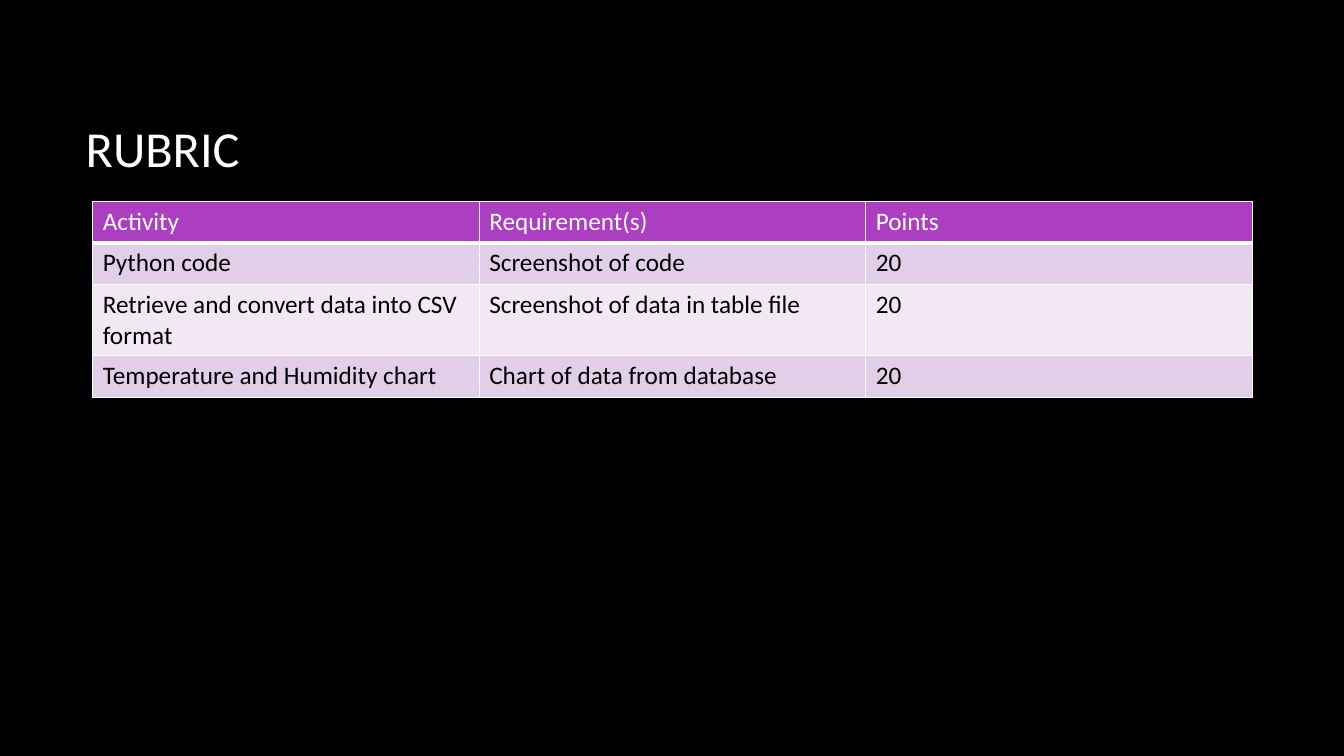
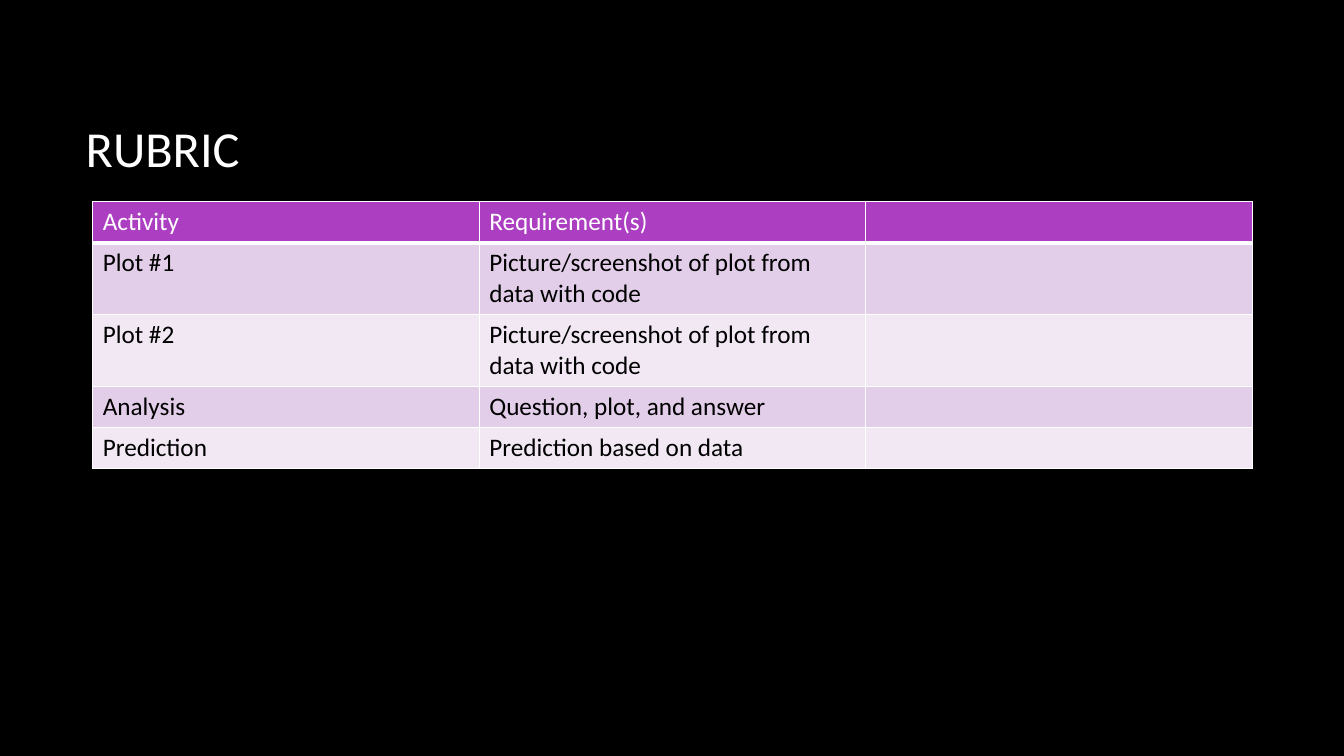
from dataclasses import dataclass

from lxml import etree
from pptx import Presentation
from pptx.dml.color import RGBColor
from pptx.enum.text import MSO_ANCHOR, PP_ALIGN
from pptx.oxml.ns import qn
from pptx.util import Inches, Pt

LEFT = PP_ALIGN.LEFT
MIDDLE = MSO_ANCHOR.MIDDLE
TITLE_ONLY = 5


@dataclass(frozen=True)
class Theme:
    font: str = "Calibri"
    title_size: int = 36
    table_size: int = 18
    background: str = "000000"
    light: str = "FFFFFF"
    dark: str = "000000"
    header: str = "AC3EC1"
    bands: tuple[str, str] = ("E3CEE9", "F1E8F4")
    border: float = 1
    header_rule: float = 3


@dataclass(frozen=True)
class Rubric:
    title: str
    rows: tuple[tuple[str, str, str], ...]


THEME = Theme()
TITLE_AREA = {"left": Inches(0.75), "top": Inches(0.67),
              "width": Inches(11.08), "height": Inches(1.59)}
TABLE_LEFT, TABLE_TOP, TABLE_WIDTH = Inches(0.92), Inches(2), Inches(11.5)
ROW_HEIGHT = Inches(0.41)

RUBRICS = (
    Rubric("RUBRIC", (
        ("Activity", "Requirement(s)", "Points"),
        ("Python code", "Screenshot of code", "20"),
        ("Retrieve and convert data into CSV format",
         "Screenshot of data in table file", "20"),
        ("Temperature and Humidity chart", "Chart of data from database", "20"),
    )),
    Rubric("RUBRIC", (
        ("Activity", "Requirement(s)", ""),
        ("Plot #1", "Picture/screenshot of plot from data with code", ""),
        ("Plot #2", "Picture/screenshot of plot from data with code", ""),
        ("Analysis", "Question, plot, and answer", ""),
        ("Prediction", "Prediction based on data", ""),
    )),
)


def write_text(frame, text: str, size: int, color: str) -> None:
    para = frame.paragraphs[0]
    para.alignment = LEFT
    para.font.size = Pt(size)
    if not text:
        return
    span = para.add_run()
    span.text = text
    for name, value in {"name": THEME.font, "size": Pt(size), "bold": False}.items():
        setattr(span.font, name, value)
    span.font.color.rgb = RGBColor.from_string(color)


def add_borders(cell, bottom: float) -> None:
    """Outline a cell; must run before its fill is set, as the XML order requires."""
    properties = cell._tc.get_or_add_tcPr()
    widths = {"lnL": THEME.border, "lnR": THEME.border,
              "lnT": THEME.border, "lnB": bottom}
    for side, width in widths.items():
        line = etree.SubElement(properties, qn(f"a:{side}"), w=str(Pt(width)))
        fill = etree.SubElement(line, qn("a:solidFill"))
        etree.SubElement(fill, qn("a:srgbClr"), val=THEME.light)


def add_title(page, text: str) -> None:
    box = page.shapes.title
    for name, value in TITLE_AREA.items():
        setattr(box, name, value)
    box.text_frame.vertical_anchor = MIDDLE
    write_text(box.text_frame, text, THEME.title_size, THEME.light)


def add_rubric_table(page, rows: tuple[tuple[str, str, str], ...]) -> None:
    table = page.shapes.add_table(
        len(rows), len(rows[0]), TABLE_LEFT, TABLE_TOP,
        TABLE_WIDTH, ROW_HEIGHT * len(rows)).table
    for row_index, texts in enumerate(rows):
        is_header = row_index == 0
        fill = THEME.header if is_header else THEME.bands[(row_index - 1) % 2]
        color = THEME.light if is_header else THEME.dark
        bottom = THEME.header_rule if is_header else THEME.border
        for column_index, text in enumerate(texts):
            cell = table.cell(row_index, column_index)
            add_borders(cell, bottom)
            cell.fill.solid()
            cell.fill.fore_color.rgb = RGBColor.from_string(fill)
            write_text(cell.text_frame, text, THEME.table_size, color)


def main() -> None:
    deck = Presentation()
    deck.slide_width, deck.slide_height = Inches(13.33), Inches(7.5)
    background = deck.slide_master.background.fill
    background.solid()
    background.fore_color.rgb = RGBColor.from_string(THEME.background)
    for rubric in RUBRICS:
        page = deck.slides.add_slide(deck.slide_layouts[TITLE_ONLY])
        add_title(page, rubric.title)
        add_rubric_table(page, rubric.rows)
    deck.save("out.pptx")


if __name__ == "__main__":
    main()
